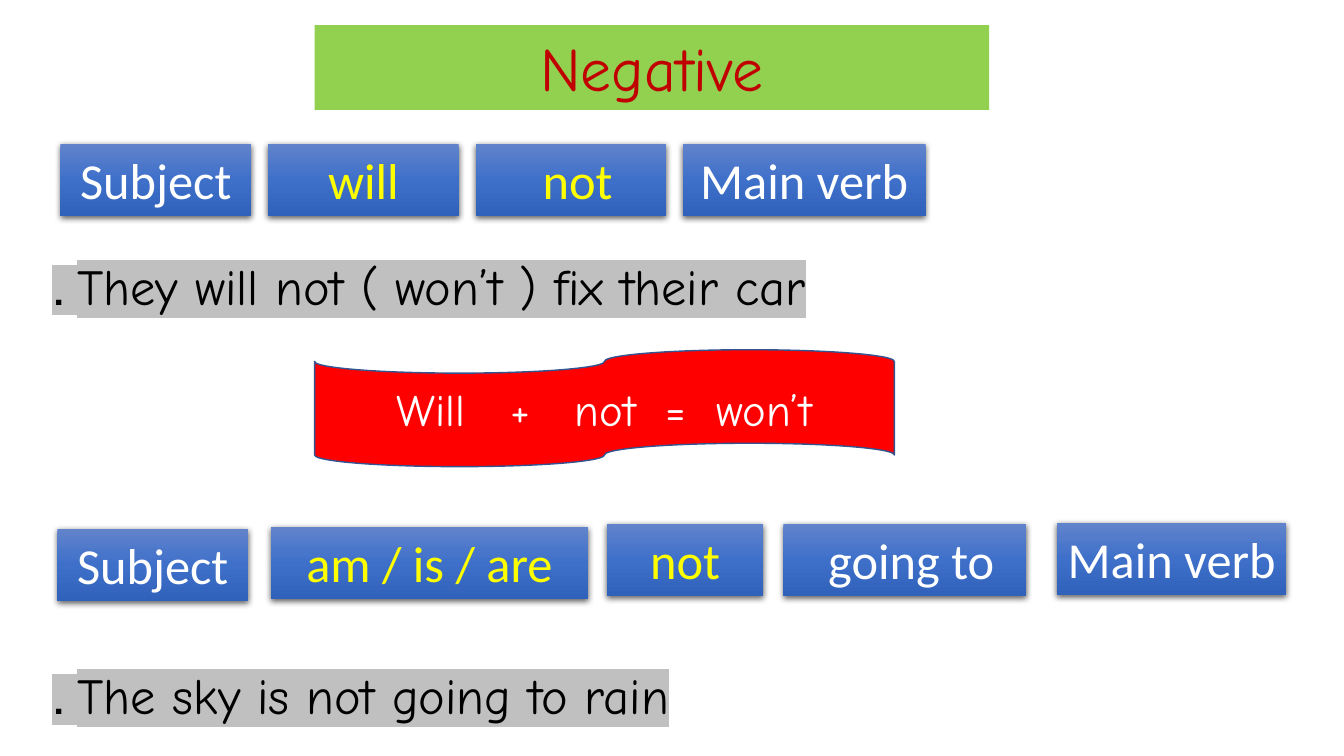
from dataclasses import dataclass

from lxml.etree import SubElement
from pptx import Presentation
from pptx.dml.color import RGBColor
from pptx.enum.shapes import MSO_SHAPE
from pptx.enum.text import MSO_ANCHOR, MSO_AUTO_SIZE, PP_ALIGN
from pptx.oxml.ns import qn
from pptx.util import Inches, Pt


@dataclass(frozen=True)
class Theme:
    script_font: str = "Comic Neue"
    plain_font: str = "Calibri"
    title_size: int = 44
    body_size: int = 36
    tape_size: int = 32
    title_fill: str = "92D050"
    title_text: str = "C00000"
    tape_fill: str = "FF0000"
    tape_line: str = "325491"
    white: str = "FFFFFF"
    yellow: str = "FFFF00"
    black: str = "000000"
    highlight: str = "C0C0C0"
    gradient: tuple = ((0, "6183CB"), (50, "3E70CA"), (100, "3062BB"))


THEME = Theme()


def inches(box):
    return [Inches(length) for length in box]


def write(shape, text, size, font, color, align=PP_ALIGN.CENTER,
          anchor=MSO_ANCHOR.TOP, grow=True):
    frame = shape.text_frame
    frame.word_wrap = True
    frame.vertical_anchor = anchor
    frame.auto_size = MSO_AUTO_SIZE.SHAPE_TO_FIT_TEXT if grow else MSO_AUTO_SIZE.NONE
    paragraph = frame.paragraphs[0]
    paragraph.alignment = align
    paragraph._p.get_or_add_pPr().set("rtl", "1")
    run = paragraph.add_run()
    run.text = text
    run.font.size = Pt(size)
    run.font.name = font
    run.font.color.rgb = RGBColor.from_string(color)
    return run


def add_color(parent, color):
    return SubElement(parent, qn("a:srgbClr"), val=color)


def paint_gradient(shape):
    properties = shape._element.spPr
    gradient = SubElement(properties, qn("a:gradFill"), rotWithShape="1")
    stops = SubElement(gradient, qn("a:gsLst"))
    for position, color in THEME.gradient:
        add_color(SubElement(stops, qn("a:gs"), pos=str(position * 1000)), color)
    SubElement(gradient, qn("a:lin"), ang="5400000", scaled="0")


def cast_shadow(shape):
    effects = SubElement(shape._element.spPr, qn("a:effectLst"))
    shadow = SubElement(effects, qn("a:outerShdw"), blurRad=str(Pt(4.5)),
                        dist=str(Pt(1.5)), dir="5400000", algn="ctr",
                        rotWithShape="0")
    SubElement(add_color(shadow, THEME.black), qn("a:alpha"), val="63000")


def add_title(slide, box, text):
    title = slide.shapes.title
    title.left, title.top, title.width, title.height = inches(box)
    title.fill.solid()
    title.fill.fore_color.rgb = RGBColor.from_string(THEME.title_fill)
    write(title, text, THEME.title_size, THEME.script_font, THEME.title_text)


def add_formula(slide, box, words):
    left, top, height = box
    for text, color, across, rise, width in words:
        card = slide.shapes.add_shape(
            MSO_SHAPE.RECTANGLE, *inches((left + across, top - rise, width, height)))
        paint_gradient(card)
        card.line.fill.background()
        cast_shadow(card)
        write(card, text, THEME.body_size, THEME.plain_font, color)


def add_example(slide, box, text):
    example = slide.shapes.add_textbox(*inches(box))
    run = write(example, text, THEME.body_size, THEME.script_font,
                THEME.black, PP_ALIGN.LEFT)
    properties = run._r.get_or_add_rPr()
    highlight = SubElement(properties, qn("a:highlight"))
    add_color(highlight, THEME.highlight)
    properties.find(qn("a:solidFill")).addnext(highlight)


def add_tape(slide, box, text):
    tape = slide.shapes.add_shape(MSO_SHAPE.WAVE, *inches(box))
    tape._element.spPr.find(qn("a:prstGeom")).set("prst", "flowChartPunchedTape")
    guides = tape._element.spPr.find(qn("a:prstGeom")).find(qn("a:avLst"))
    for guide in list(guides):
        guides.remove(guide)
    tape.shadow.inherit = False
    tape.fill.solid()
    tape.fill.fore_color.rgb = RGBColor.from_string(THEME.tape_fill)
    tape.line.color.rgb = RGBColor.from_string(THEME.tape_line)
    tape.line.width = Pt(1)
    write(tape, text, THEME.tape_size, THEME.script_font, THEME.white,
          anchor=MSO_ANCHOR.MIDDLE, grow=False)


def build_negative_slide(presentation):
    slide = presentation.slides.add_slide(presentation.slide_layouts[5])
    add_title(slide, (3.12, 0.25, 6.69, 0.84), "Negative")
    add_formula(slide, (0.6, 1.43, 0.71), (
        ("Subject", THEME.white, 0, 0, 1.89),
        ("will", THEME.yellow, 2.06, 0, 1.89),
        ("not ", THEME.yellow, 4.12, 0, 1.89),
        ("Main verb", THEME.white, 6.17, 0, 2.41),
    ))
    add_example(slide, (0.42, 2.48, 11.16, 0.71),
                "They will not ( won’t ) fix their car .")
    add_tape(slide, (3.12, 3.47, 5.75, 1.16), "Will   +   not  =  won’t")
    add_formula(slide, (0.57, 5.25, 0.71), (
        ("Subject", THEME.white, 0, 0, 1.89),
        ("am / is / are", THEME.yellow, 2.12, 0.02, 3.14),
        ("not", THEME.yellow, 5.45, 0.05, 1.55),
        ("going to ", THEME.white, 7.2, 0.05, 2.41),
        ("Main verb", THEME.white, 9.91, 0.06, 2.28),
    ))
    add_example(slide, (0.42, 6.54, 11.16, 0.71), "The sky is not going to rain .")


def main():
    presentation = Presentation()
    presentation.slide_width = Inches(13.33)
    presentation.slide_height = Inches(7.5)
    build_negative_slide(presentation)
    presentation.save("out.pptx")


if __name__ == "__main__":
    main()
